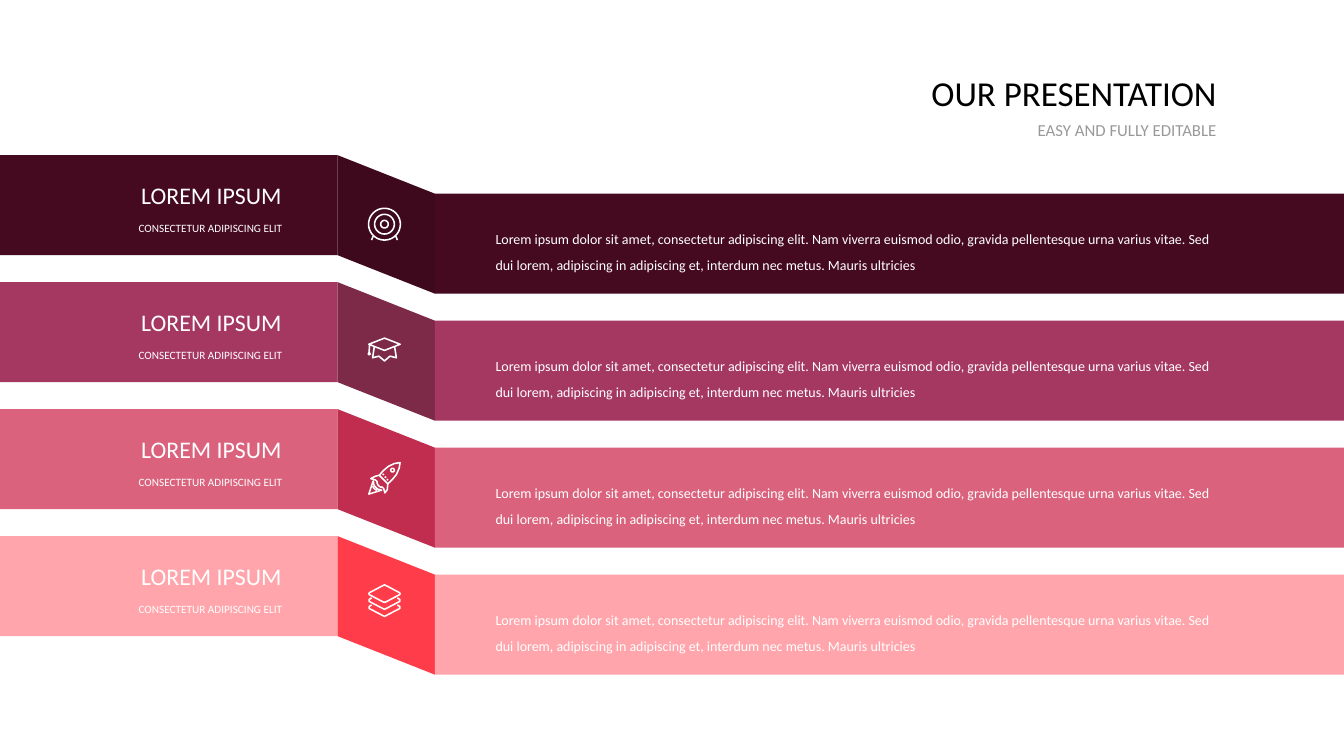
import math
from dataclasses import dataclass

from pptx import Presentation
from pptx.dml.color import RGBColor
from pptx.enum.shapes import MSO_SHAPE
from pptx.enum.text import MSO_AUTO_SIZE, PP_ALIGN
from pptx.oxml.ns import qn
from pptx.util import Cm, Pt

RECT, SLANT = MSO_SHAPE.RECTANGLE, MSO_SHAPE.PARALLELOGRAM
LEFT, RIGHT = PP_ALIGN.LEFT, PP_ALIGN.RIGHT
GROW = MSO_AUTO_SIZE.SHAPE_TO_FIT_TEXT

WHITE = RGBColor(0xFF, 0xFF, 0xFF)
BLACK = RGBColor(0x00, 0x00, 0x00)
GREY = RGBColor(0x99, 0x99, 0x99)
WINE = RGBColor(0x45, 0x09, 0x20)
WINE_DARK = RGBColor(0x3E, 0x08, 0x1D)
PLUM = RGBColor(0xA5, 0x38, 0x60)
PLUM_DARK = RGBColor(0x7C, 0x2A, 0x48)
ROSE = RGBColor(0xDA, 0x62, 0x7D)
ROSE_DARK = RGBColor(0xC0, 0x2D, 0x4E)
PINK = RGBColor(0xFF, 0xA5, 0xAB)
PINK_DARK = RGBColor(0xFF, 0x3C, 0x49)

Point = tuple[float, float]
Contour = list[Point]

# Layout in centimetres
SLIDE_W, SLIDE_H = 33.87, 19.05
TOP, PITCH, BAND_H = 3.91, 3.2, 2.52
TAB_W, FOLD_W, DROP = 8.51, 2.45, 0.97
BODY_X = TAB_W + FOLD_W
ICON_X = 9.69
ICON_UNIT = Cm(0.001)  # icon points are hundredths of a millimetre

BODY = ("Lorem ipsum dolor sit amet, consectetur adipiscing elit. Nam viverra "
        "euismod odio, gravida pellentesque urna varius vitae. Sed dui lorem, "
        "adipiscing in adipiscing et, interdum nec metus. Mauris ultricies")


@dataclass(frozen=True)
class Label:
    text: str
    x: float
    y: float
    w: float
    h: float
    size: int
    color: RGBColor = WHITE
    align: PP_ALIGN = RIGHT
    spacing: float = 1.0
    wrap: bool = True


@dataclass(frozen=True)
class Band:
    color: RGBColor
    fold: RGBColor
    icon: list[Contour]
    icon_y: float


# Icon outlines, relative to the icon centre
def circle(r: float, cx: float = 0, cy: float = 0, n: int = 48) -> Contour:
    return [(cx + r * math.cos(2 * math.pi * i / n),
             cy + r * math.sin(2 * math.pi * i / n)) for i in range(n + 1)]


def mirrored(half: Contour) -> Contour:
    """Complete a left half that ends on the vertical axis."""
    return half + [(-x, y) for x, y in reversed(half[:-1])]


def layer_edge(dy: float) -> Contour:
    return mirrored([(-325, dy - 75), (-385, dy - 35), (-385, dy + 15),
                     (0, dy + 215)])


TARGET = [circle(400), circle(248), circle(95),
          [(-285, 300), (-325, 400)], [(285, 300), (325, 400)]]
CAP = [mirrored([(0, -290), (-395, -135), (0, 20)]),
       mirrored([(-255, -75), (-300, 205), (-140, 165), (0, 285)]),
       [(-375, -120), (-390, 80)], circle(22, -385, 105)]
ROCKET = [
    # hull, left fin, right fin
    [(-130, -75), (-30, -190), (100, -300), (250, -370), (393, -393),
     (370, -250), (300, -90), (200, 30), (85, 140), (-130, -75)],
    [(-130, -75), (-230, -50), (-345, 10), (-240, 40), (-190, 75),
     (-185, 130), (-150, 190), (-90, 230), (-65, 215)],
    [(-65, 215), (-20, 260), (10, 370), (70, 290), (85, 140)],
    # exhaust
    [(-285, 70), (-395, 400), (-70, 300), (-180, 270), (-260, 190),
     (-285, 70)],
    [(-300, 200), (-260, 260), (-190, 310)],
    # window and rivets
    circle(45, 203, -203), circle(5, 25, -25), circle(5, 75, 38),
    circle(5, -30, -95)]
LAYERS = [mirrored([(0, -400), (-30, -390), (-380, -205), (-395, -180),
                    (-380, -155), (-30, 30), (0, 38)]),
          layer_edge(0), layer_edge(178)]

BANDS = [Band(WINE, WINE_DARK, TARGET, 1.74),
         Band(PLUM, PLUM_DARK, CAP, 1.70),
         Band(ROSE, ROSE_DARK, ROCKET, 1.74),
         Band(PINK, PINK_DARK, LAYERS, 1.63)]
BAND_LABELS = [  # y counts from the top of the band
    Label(BODY, 12.24, 1.57, 18.8, 1.47, 10, align=LEFT, spacing=1.5),
    Label("LOREM IPSUM", 2.57, 0.53, 4.78, 0.99, 17),
    Label("CONSECTETUR ADIPISCING ELIT", 3.23, 1.55, 4.14, 0.61, 8,
          wrap=False)]
HEADINGS = [
    Label("OUR PRESENTATION", 21.59, 1.68, 9.32, 1.32, 25, BLACK),
    Label("EASY AND FULLY EDITABLE", 23.44, 2.9, 7.47, 0.76, 12, GREY)]


def add_block(s, kind, x: float, y: float, w: float, h: float,
              color: RGBColor):
    sp = s.shapes.add_shape(kind, Cm(x), Cm(y), Cm(w), Cm(h))
    sp.shadow.inherit = False
    sp.fill.solid()
    sp.fill.fore_color.rgb = color
    sp.line.fill.background()
    return sp


def add_label(s, label: Label, dy: float = 0) -> None:
    tf = s.shapes.add_textbox(Cm(label.x), Cm(label.y + dy),
                              Cm(label.w), Cm(label.h)).text_frame
    tf.word_wrap = label.wrap
    tf.auto_size = GROW
    p = tf.paragraphs[0]
    r = p.add_run()
    r.text = label.text
    r.font.color.rgb = label.color
    formats = {p: {"alignment": label.align, "line_spacing": label.spacing},
               r.font: {"name": "Calibri", "size": Pt(label.size)}}
    for target, values in formats.items():
        for name, value in values.items():
            setattr(target, name, value)


def add_icon(s, contours: list[Contour], y: float) -> None:
    fb = s.shapes.build_freeform(*contours[0][0], scale=ICON_UNIT)
    for i, contour in enumerate(contours):
        if i:
            fb.move_to(*contour[0])
        fb.add_line_segments(contour[1:], close=contour[0] == contour[-1])
    sp = fb.convert_to_shape(Cm(ICON_X), Cm(y))
    sp.shadow.inherit = False
    sp.fill.background()
    sp.line.color.rgb = WHITE
    sp.line.width = Pt(1.1)
    ln = sp.line.fill._xPr
    ln.append(ln.makeelement(qn("a:round"), {}))


def add_band(s, band: Band, y: float) -> None:
    add_block(s, RECT, 0, y, TAB_W, BAND_H, band.color)
    # The fold is a parallelogram turned on its side about its centre
    length = BAND_H + DROP
    fold = add_block(s, SLANT, TAB_W + (FOLD_W - length) / 2,
                     y + (length - FOLD_W) / 2, length, FOLD_W, band.fold)
    fold.rotation = 270
    fold.adjustments[0] = DROP / FOLD_W
    add_block(s, RECT, BODY_X, y + DROP, SLIDE_W - BODY_X, BAND_H, band.color)
    add_icon(s, band.icon, y + band.icon_y)
    for label in BAND_LABELS:
        add_label(s, label, y)


def main() -> None:
    prs = Presentation()
    prs.slide_width, prs.slide_height = Cm(SLIDE_W), Cm(SLIDE_H)
    s = prs.slides.add_slide(prs.slide_layouts[6])
    for i, band in enumerate(BANDS):
        add_band(s, band, TOP + i * PITCH)
    for label in HEADINGS:
        add_label(s, label)
    prs.save("out.pptx")


if __name__ == "__main__":
    main()
